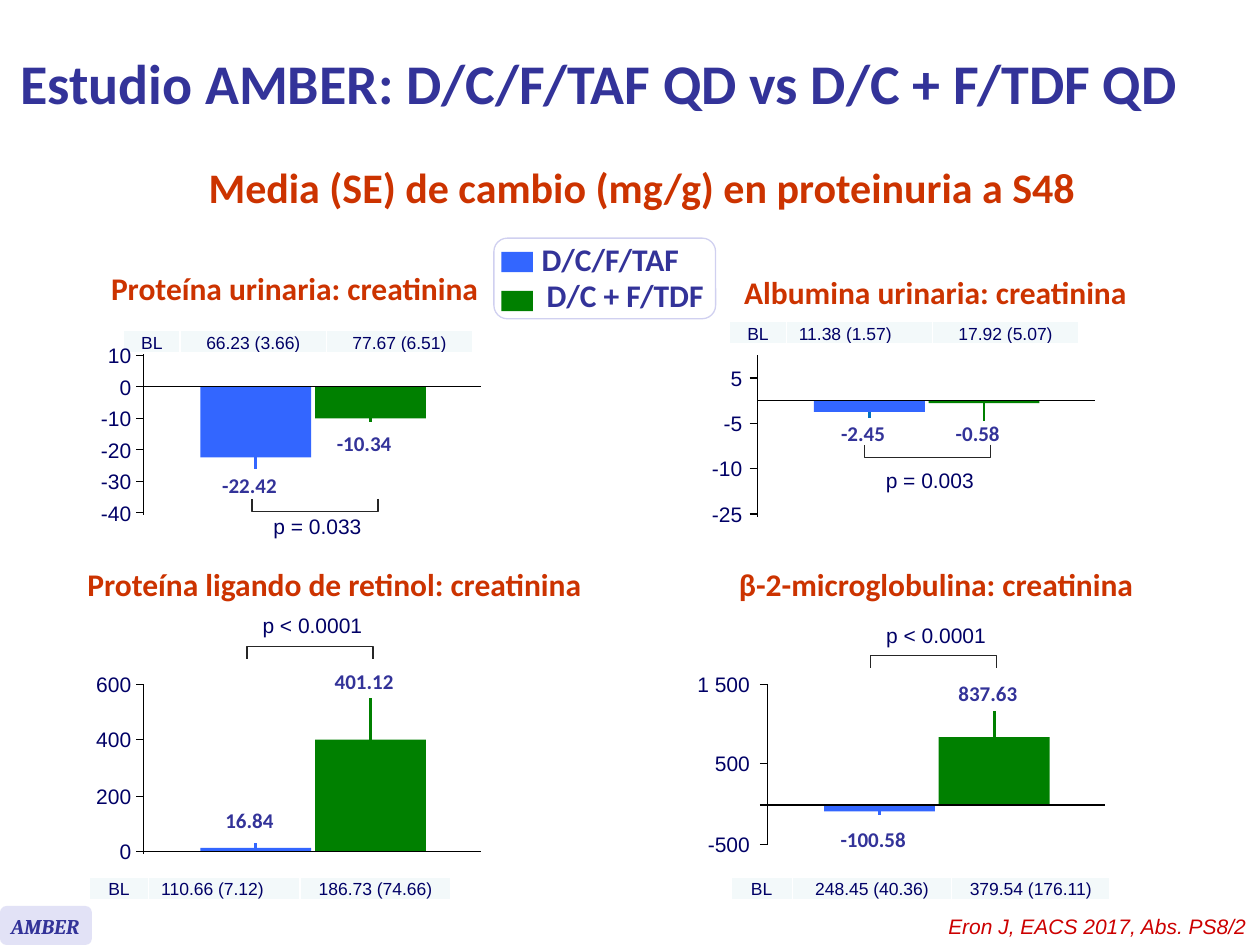
from lxml.etree import SubElement
from pptx import Presentation
from pptx.dml.color import RGBColor
from pptx.enum.shapes import MSO_CONNECTOR, MSO_SHAPE
from pptx.enum.text import MSO_ANCHOR, PP_ALIGN
from pptx.oxml.ns import qn
from pptx.util import Inches, Pt

BLUE, GREEN, NAVY, INDIGO, RUST = "3366FF", "008000", "000066", "333399", "CC3300"
BAR_WIDTH, AXIS_LENGTH, TICK = 0.88, 2.68, 0.06
BAR_OFFSETS, ERROR_OFFSETS = (0.45, 1.36), (0.89, 1.8)

PANELS = [
    {"title": "Proteína urinaria: creatinina", "title_box": (0.86, 2.15, 2.96, 0.31),
     "x": 1.14, "top": 2.81, "bottom": 4.09, "zero": 3.07, "label_right": 1.14,
     "ticks": [(2.82, "10"), (3.07, "0"), (3.32, "-10"), (3.57, "-20"), (3.82, "-30"), (4.07, "-40")],
     "bars": [("-22.42", BLUE, 3.63, 3.72, BLUE, 3.7), ("-10.34", GREEN, 3.32, 3.35, GREEN, 3.37)],
     "p": ("p = 0.033", 4.03), "bracket": (1.36, 4.01, 90),
     "baseline": (0.98, 2.62, (0.45, 1.16, 1.16), ("BL", "66.23 (3.66)", "77.67 (6.51)"), False)},
    {"title": "Albumina urinaria: creatinina", "title_box": (5.84, 2.18, 3.17, 0.31),
     "x": 6.01, "top": 2.82, "bottom": 4.1, "zero": 3.18, "label_right": 5.99,
     "ticks": [(3, "5"), (3.36, "-5"), (3.72, "-10"), (4.08, "-25")],
     "bars": [("-2.45", BLUE, 3.27, 3.32, "0070C0", 3.29), ("-0.58", GREEN, 3.2, 3.34, GREEN, 3.29)],
     "p": ("p = 0.003", 3.66), "bracket": (1.35, 3.58, 90),
     "baseline": (5.79, 2.55, (0.45, 1.16, 1.16), ("BL", "11.38 (1.57)", "17.92 (5.07)"), True)},
    {"title": "Proteína ligando de retinol: creatinina", "title_box": (0.62, 4.47, 4.07, 0.36),
     "x": 1.14, "top": 5.43, "bottom": 6.78, "zero": 6.76, "label_right": 1.14,
     "ticks": [(5.43, "600"), (5.87, "400"), (6.32, "200"), (6.76, "0")],
     "bars": [("16.84", BLUE, 6.73, 6.69, BLUE, 6.36), ("401.12", GREEN, 5.87, 5.54, GREEN, 5.26)],
     "p": ("p < 0.0001", 4.81), "bracket": (1.32, 5.18, 270),
     "baseline": (0.71, 6.96, (0.47, 1.2, 1.2), ("BL", "110.66 (7.12)", "186.73 (74.66)"), True)},
    {"title": "β-2-microglobulina: creatinina", "title_box": (5.84, 4.47, 3.18, 0.36),
     "x": 6.09, "top": 5.43, "bottom": 6.71, "zero": 6.39, "label_right": 6.05,
     "ticks": [(5.43, "1 500"), (6.06, "500"), (6.39, ""), (6.7, "-500")],
     "bars": [("-100.58", BLUE, 6.44, 6.47, BLUE, 6.51), ("837.63", GREEN, 5.85, 5.64, GREEN, 5.35)],
     "p": ("p < 0.0001", 4.89), "bracket": (1.32, 5.25, 270),
     "baseline": (5.8, 6.96, (0.49, 1.26, 1.26), ("BL", "248.45 (40.36)", "379.54 (176.11)"), False)},
]
LEGEND = [("D/C/F/TAF", BLUE, 2, 4.2, 1.86), ("D/C + F/TDF", GREEN, 2.31, 4.24, 2.14)]


def rgb(code):
    return RGBColor.from_string(code)


def write(tf, text, size=12, font="Arial", color=NAVY, bold=False, italic=False,
          align=PP_ALIGN.CENTER, anchor=MSO_ANCHOR.TOP, spacing=None, margins=None):
    tf.word_wrap = True
    tf.vertical_anchor = anchor
    if margins is not None:
        tf.margin_left = tf.margin_right = tf.margin_top = tf.margin_bottom = Inches(margins)
    p = tf.paragraphs[0]
    p.alignment = align
    if spacing:
        p.line_spacing = spacing
    r = p.add_run()
    r.text = text
    r.font.size, r.font.name = Pt(size), font
    r.font.bold, r.font.italic = bold, italic
    r.font.color.rgb = rgb(color)


def add_text(s, box, text, **style):
    write(s.shapes.add_textbox(*map(Inches, box)).text_frame, text, **style)


def add_shape(s, kind, box, fill=None, line=None):
    sp = s.shapes.add_shape(kind, *map(Inches, box))
    sp.shadow.inherit = False
    if fill:
        sp.fill.solid()
        sp.fill.fore_color.rgb = rgb(fill)
    else:
        sp.fill.background()
    if line:
        sp.line.color.rgb = rgb(line)
        sp.line.width = Pt(0.75)
    else:
        sp.line.fill.background()
    return sp


def add_line(s, x1, y1, x2, y2, color="000000", width=0.75):
    line = s.shapes.add_connector(MSO_CONNECTOR.STRAIGHT, *map(Inches, (x1, y1, x2, y2)))
    line.line.color.rgb = rgb(color)
    line.line.width = Pt(width)
    SubElement(line._element.spPr, qn("a:effectLst"))


def add_baseline(s, left, top, widths, values, middle_left):
    frame = s.shapes.add_table(1, 3, *map(Inches, (left, top, sum(widths), 0.18)))
    table = frame.table
    table.first_row = table.horz_banding = False
    table.rows[0].height = Inches(0.18)
    for i, (width, value) in enumerate(zip(widths, values)):
        table.columns[i].width = Inches(width)
        cell = table.cell(0, i)
        cell.fill.solid()
        cell.fill.fore_color.rgb = rgb("F3F9FA")
        shifted = middle_left and i == 1
        write(cell.text_frame, value, size=10, spacing=1.07,
              align=PP_ALIGN.LEFT if shifted else PP_ALIGN.CENTER)
        cell.vertical_anchor = MSO_ANCHOR.BOTTOM
        cell.margin_top = cell.margin_bottom = 0
        cell.margin_left = Inches(0.1 if shifted else 0.05)
        cell.margin_right = Inches(0.05)


def add_panel(s, panel):
    x, zero = panel["x"], panel["zero"]
    flat = {"anchor": MSO_ANCHOR.MIDDLE, "spacing": 0.9, "margins": 0}
    add_text(s, panel["title_box"], panel["title"], size=18, font="Calibri",
             color=RUST, bold=True, **flat)
    add_baseline(s, *panel["baseline"])
    for bar, bar_dx, error_dx in zip(panel["bars"], BAR_OFFSETS, ERROR_OFFSETS):
        value, color, end, error_end, error_color, label_top = bar
        add_shape(s, MSO_SHAPE.RECTANGLE,
                  (x + bar_dx, min(zero, end), BAR_WIDTH, abs(end - zero)), color)
        add_line(s, x + error_dx, end, x + error_dx, error_end, error_color, 1.63)
        add_text(s, (x + error_dx - 0.45, label_top, 0.8, 0.3), value,
                 font="Calibri", color=INDIGO, bold=True)
    add_line(s, x, panel["top"], x, panel["bottom"])
    add_line(s, x, zero, x + AXIS_LENGTH, zero)
    for y, label in panel["ticks"]:
        add_line(s, x - TICK, y, x, y)
        if label:
            add_text(s, (panel["label_right"] - 0.7, y - 0.15, 0.7, 0.3), label,
                     align=PP_ALIGN.RIGHT)
    dx, middle, rotation = panel["bracket"]
    bracket = add_shape(s, MSO_SHAPE.RIGHT_BRACKET, (x + dx - 0.05, middle - 0.5, 0.1, 1),
                        line="262626")
    bracket.adjustments[0] = 0
    bracket.rotation = rotation
    text, top = panel["p"]
    add_text(s, (x + dx - 0.55, top, 1.14, 0.32), text, **flat)


def main():
    """Build the AMBER proteinuria slide."""
    prs = Presentation()
    prs.slide_width, prs.slide_height = Inches(10), Inches(7.5)
    s = prs.slides.add_slide(prs.slide_layouts[5])
    title = s.shapes.title
    title.left, title.top, title.width, title.height = map(Inches, (0.06, 0.05, 9.55, 1.21))
    write(title.text_frame, "Estudio AMBER: D/C/F/TAF QD vs D/C + F/TDF QD", size=32,
          font="Calibri", color=INDIGO, bold=True, align=PP_ALIGN.LEFT, anchor=MSO_ANCHOR.MIDDLE)
    add_text(s, (1.41, 1.23, 7.37, 0.5), "Media (SE) de cambio (mg/g) en proteinuria a S48",
             size=24, font="Calibri", color=RUST, bold=True)
    add_shape(s, MSO_SHAPE.ROUNDED_RECTANGLE, (3.92, 1.89, 1.76, 0.64), "FFFFFF", "D0D0F0")
    for name, color, swatch_top, left, top in LEGEND:
        add_shape(s, MSO_SHAPE.RECTANGLE, (3.98, swatch_top, 0.25, 0.16), color)
        add_text(s, (left, top, 1.6, 0.4), name, size=18, font="Calibri", color=INDIGO,
                 bold=True, align=PP_ALIGN.LEFT)
    for panel in PANELS:
        add_panel(s, panel)
    add_shape(s, MSO_SHAPE.ROUNDED_RECTANGLE, (0, 7.19, 0.73, 0.31), "E2E2F6")
    add_text(s, (-0.01, 7.2, 0.75, 0.3), "AMBER", font="Cambria", color=INDIGO,
             bold=True, italic=True, align=PP_ALIGN.LEFT)
    add_text(s, (5.83, 7.2, 4.16, 0.3), "Eron J, EACS 2017, Abs. PS8/2", color="CC0000",
             italic=True, align=PP_ALIGN.RIGHT)
    prs.save("out.pptx")


if __name__ == "__main__":
    main()
